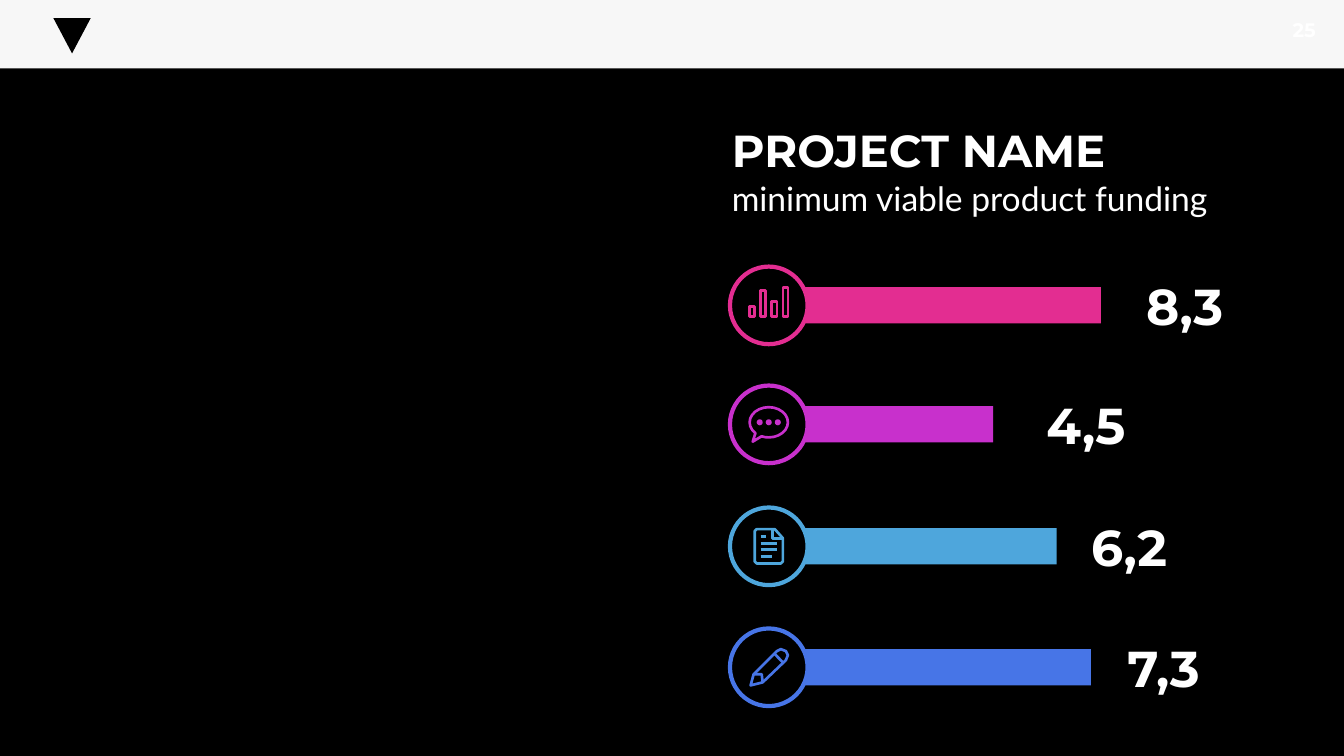
import pptx
import pptx.util
import pptx.dml.color
import pptx.enum.shapes
import pptx.enum.text

Inches, Pt = pptx.util.Inches, pptx.util.Pt
RGB = pptx.dml.color.RGBColor
SHAPE = pptx.enum.shapes.MSO_SHAPE
ALIGN = pptx.enum.text.PP_ALIGN
ANCHOR = pptx.enum.text.MSO_ANCHOR

BLACK, WHITE, BAND = RGB(0, 0, 0), RGB(255, 255, 255), RGB(0xF7, 0xF7, 0xF7)
PINK, PURPLE = RGB(0xE3, 0x2D, 0x91), RGB(0xC8, 0x30, 0xCC)
SKY, BLUE = RGB(0x4E, 0xA6, 0xDC), RGB(0x47, 0x75, 0xE7)

# Content
TITLE = "PROJECT NAME"
SUBTITLE = "minimum viable product funding"
PAGE = "25"
# value, colour, icon, row centre, bar length, left of the value
ROWS = [
    ("8,3", PINK, "chart", 3.03, 2.96, 11.07),
    ("4,5", PURPLE, "speech", 4.21, 1.89, 10.09),
    ("6,2", SKY, "document", 5.42, 2.52, 10.52),
    ("7,3", BLUE, "pencil", 6.62, 2.86, 10.86),
]

# Icon strokes as (closed, points), in inches from the circle's centre
CHART_TOPS = [0.01, -0.15, -0.04, -0.18]
CHART_PITCH, CHART_WIDTH, CHART_BASE = 0.11, 0.05, 0.11
TEXT_LINES = [(-0.1, -0.03), (-0.03, 0.08), (0.03, 0.08), (0.1, 0.03)]


def chart_bar(i, top):
    left = -0.19 + i * CHART_PITCH
    right = left + CHART_WIDTH
    return True, [(left, top), (right, top), (right, CHART_BASE), (left, CHART_BASE)]


ICONS = {
    "chart": [chart_bar(i, top) for i, top in enumerate(CHART_TOPS)],
    "document": [
        (True, [(-0.12, -0.17), (0.06, -0.17), (0.14, -0.08), (0.14, 0.15), (0.12, 0.17),
                (-0.12, 0.17), (-0.14, 0.15), (-0.14, -0.15)]),
        (False, [(0.04, -0.17), (0.04, -0.08), (0.14, -0.08)]),
    ] + [(False, [(-0.08, y), (end, y)]) for y, end in TEXT_LINES],
    "pencil": [
        (True, [(-0.18, 0.18), (-0.15, 0.07), (0.08, -0.16), (0.12, -0.18), (0.17, -0.16),
                (0.19, -0.12), (0.17, -0.07), (-0.06, 0.15)]),
        (False, [(0.06, -0.13), (0.14, -0.05)]),
        (False, [(-0.15, 0.07), (-0.07, 0.07), (-0.06, 0.15)]),
    ],
}

# Grid
WIDTH, HEIGHT = 13.33, 7.5
CIRCLE_X, CIRCLE = 7.625, 0.77
BAR_LEFT, BAR_HEIGHT = 7.96, 0.36
VALUE_WIDTH, VALUE_HEIGHT = 1.36, 0.71
ICON_WEIGHT = 1.9

prs = pptx.Presentation()
prs.slide_width, prs.slide_height = Inches(WIDTH), Inches(HEIGHT)
s = prs.slides.add_slide(prs.slide_layouts[5])
s.background.fill.solid()
s.background.fill.fore_color.rgb = BLACK


def paint(sp, fill=None, line=None, weight=ICON_WEIGHT):
    sp.shadow.inherit = False
    if fill is None:
        sp.fill.background()
    else:
        sp.fill.solid()
        sp.fill.fore_color.rgb = fill
    if line is None:
        sp.line.fill.background()
    else:
        sp.line.color.rgb = line
        sp.line.width = Pt(weight)
    return sp


def add_shape(kind, x, y, w, h, *style):
    return paint(s.shapes.add_shape(kind, *map(Inches, (x, y, w, h))), *style)


def write(sp, text, size, font, bold=False, align=ALIGN.LEFT, anchor=ANCHOR.TOP):
    tf = sp.text_frame
    tf.text = text
    tf.word_wrap = True
    tf.vertical_anchor = anchor
    p = tf.paragraphs[0]
    p.alignment = align
    f = p.runs[0].font
    f.size, f.name, f.bold, f.color.rgb = Pt(size), font, bold, WHITE


def add_text(x, y, w, h, *style):
    write(s.shapes.add_textbox(*map(Inches, (x, y, w, h))), *style)


def add_icon(strokes, cy, colour):
    builder = None
    for closed, points in strokes:
        spots = [(Inches(CIRCLE_X + x), Inches(cy + y)) for x, y in points]
        if builder is None:
            builder = s.shapes.build_freeform(*spots[0])
        else:
            builder.move_to(*spots[0])
        builder.add_line_segments(spots[1:], close=closed)
    paint(builder.convert_to_shape(), None, colour)


def add_speech(cy, colour):
    bubble = add_shape(SHAPE.OVAL_CALLOUT, CIRCLE_X - 0.19, cy - 0.17, 0.38, 0.3, None, colour)
    bubble.adjustments[0], bubble.adjustments[1] = -0.42, 0.64
    for i in (-1, 0, 1):
        add_shape(SHAPE.OVAL, CIRCLE_X + i * 0.09 - 0.03, cy - 0.05, 0.06, 0.06, colour)


# Header band with a plain mark and the page number
add_shape(SHAPE.RECTANGLE, 0, 0, WIDTH, 0.68, BAND)
add_shape(SHAPE.FLOWCHART_MERGE, 0.53, 0.18, 0.37, 0.35, BLACK)
add_text(12.15, 0.09, 1, 0.4, PAGE, 14, "Montserrat", True, ALIGN.RIGHT, ANCHOR.MIDDLE)

# Title and subtitle
title = s.shapes.title
title.left, title.top, title.width, title.height = map(Inches, (7.16, 1.17, 5.19, 0.64))
write(title, TITLE, 32, "Montserrat", True)
add_text(7.16, 1.72, 5.86, 0.5, SUBTITLE, 24, "Lato")

# Rows: bar, circle, icon and value
for value, colour, icon, cy, length, value_left in ROWS:
    add_shape(SHAPE.RECTANGLE, BAR_LEFT, cy - BAR_HEIGHT / 2, length, BAR_HEIGHT, colour)
    add_shape(SHAPE.OVAL, CIRCLE_X - CIRCLE / 2, cy - CIRCLE / 2, CIRCLE, CIRCLE,
              BLACK, colour, 3)
    if icon == "speech":
        add_speech(cy, colour)
    else:
        add_icon(ICONS[icon], cy, colour)
    add_text(value_left, cy - VALUE_HEIGHT / 2, VALUE_WIDTH, VALUE_HEIGHT,
             value, 36, "Montserrat", True, ALIGN.CENTER, ANCHOR.MIDDLE)

prs.save("out.pptx")
